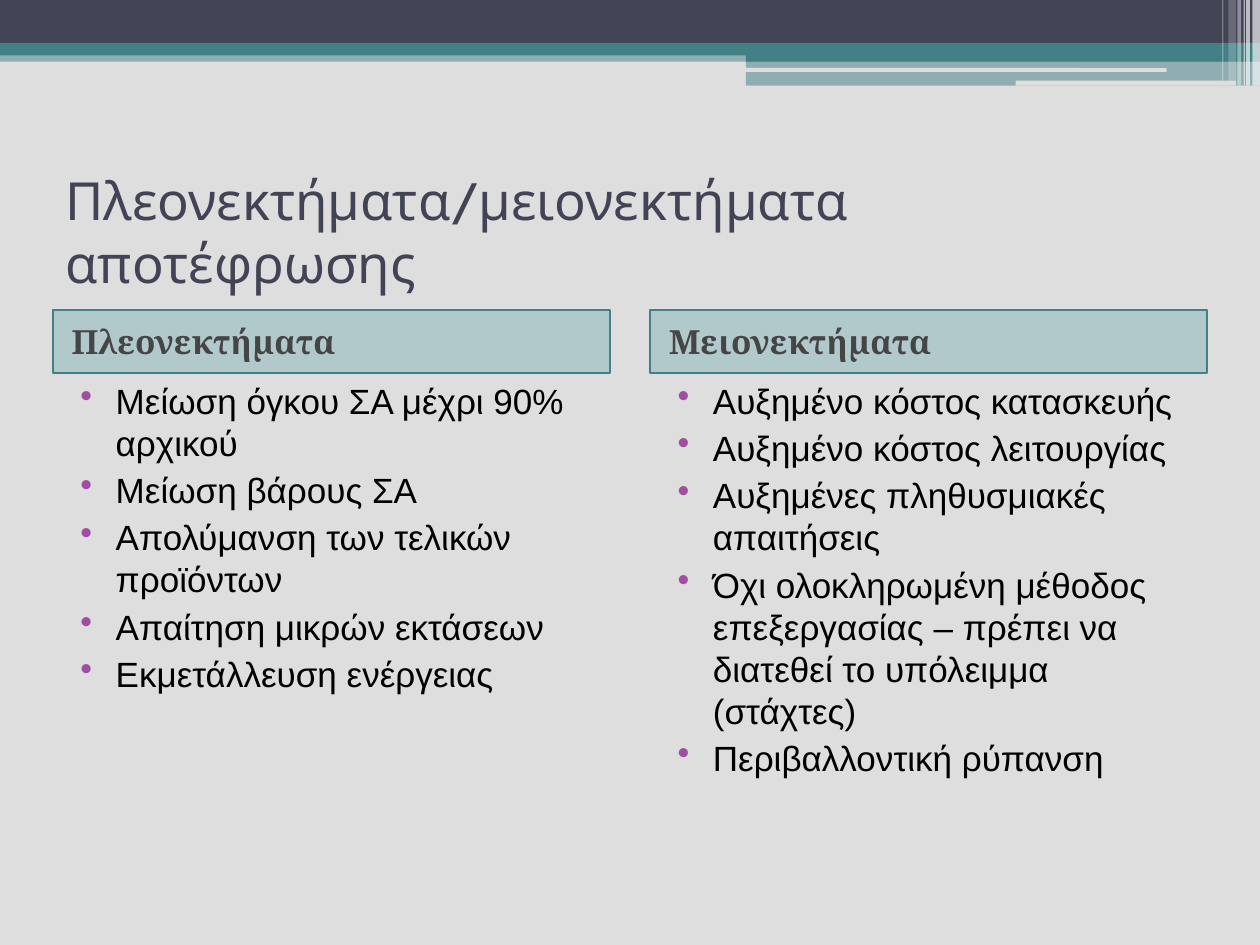
"""Build the slide on the pros and cons of incineration."""
import pptx
import pptx.util
import pptx.dml.color
import pptx.enum.shapes
import pptx.enum.text
import pptx.oxml.ns
from lxml import etree

Inches, Pt = pptx.util.Inches, pptx.util.Pt
RGB = pptx.dml.color.RGBColor
KIND = pptx.enum.shapes.MSO_SHAPE
ANCHOR = pptx.enum.text.MSO_ANCHOR
qn = pptx.oxml.ns.qn

PAPER = RGB(0xDE, 0xDE, 0xDE)
NAVY = RGB(0x42, 0x44, 0x56)
TEAL = RGB(0x43, 0x80, 0x86)
AQUA = RGB(0x32, 0x8E, 0x97)
WHITE = RGB(0xFF, 0xFF, 0xFF)
GREY = RGB(0x45, 0x45, 0x45)
BLACK = RGB(0, 0, 0)
PURPLE = RGB(0xA0, 0x4D, 0xA3)

TITLE = "Πλεονεκτήματα/μειονεκτήματα αποτέφρωσης"
COLUMNS = [
    ("Πλεονεκτήματα", [
        "Μείωση όγκου ΣΑ μέχρι 90% αρχικού",
        "Μείωση βάρους ΣΑ",
        "Απολύμανση των τελικών προϊόντων",
        "Απαίτηση μικρών εκτάσεων",
        "Εκμετάλλευση ενέργειας",
    ]),
    ("Μειονεκτήματα", [
        "Αυξημένο κόστος κατασκευής",
        "Αυξημένο κόστος λειτουργίας",
        "Αυξημένες πληθυσμιακές απαιτήσεις",
        "Όχι ολοκληρωμένη μέθοδος επεξεργασίας – πρέπει να διατεθεί "
        "το υπόλειμμα (στάχτες)",
        "Περιβαλλοντική ρύπανση",
    ]),
]
BANDS = [
    ((0, 0.4, 10, 0.09), TEAL, 50),
    ((0, 0, 10, 0.34), NAVY, 100),
    ((0, 0.34, 10, 0.1), TEAL, 100),
    ((5.92, 0.39, 4.08, 0.1), TEAL, 100),
    ((5.92, 0.48, 4.08, 0.2), TEAL, 50),
]
SLOTS = [(5.91, 0.54, 3.35, 0.03), (8.06, 0.64, 1.75, 0.04)]
STRIPES = [
    (9.94, 0.06, 0.68, 65), (9.89, 0.03, 0.68, 65), (9.87, 0.01, 0.68, 60),
    (9.82, 0.03, 0.68, 40), (9.75, 0.06, 0.64, 20), (9.7, 0.01, 0.64, 30),
]
HEADING = {"size": Pt(30), "name": "Cabin"}
LABEL = {"size": Pt(19), "name": "Cambria", "bold": True}
ITEM = {"size": Pt(20), "name": "Arial"}

LEFT, WIDTH, STEP = 0.42, 4.42, 4.74
TOP, HEAD, BODY = 2.46, 0.5, 4.25


def add_box(slide, at, color, alpha=100, kind=KIND.RECTANGLE):
    """Add a filled shape without outline or shadow."""
    box = slide.shapes.add_shape(kind, *map(Inches, at))
    box.shadow.inherit = False
    box.fill.solid()
    box.fill.fore_color.rgb = color
    box.line.fill.background()
    if alpha < 100:
        tint = box.fill._xPr.find(".//" + qn("a:srgbClr"))
        etree.SubElement(tint, qn("a:alpha"), val=str(alpha * 1000))
    return box


def add_bullet(para):
    """Give a paragraph a coloured bullet."""
    props = para._p.get_or_add_pPr()
    tint = etree.SubElement(props, qn("a:buClr"))
    etree.SubElement(tint, qn("a:srgbClr"), val=str(PURPLE))
    etree.SubElement(props, qn("a:buChar"), char="•")


def write(box, lines, style, color, anchor, indent=(0, 0), bullet=False):
    """Fill a box with styled left-aligned paragraphs."""
    frame = box.text_frame
    frame.word_wrap = True
    frame.vertical_anchor = anchor
    for pos, line in enumerate(lines):
        para = frame.add_paragraph() if pos else frame.paragraphs[0]
        para.alignment = pptx.enum.text.PP_ALIGN.LEFT
        if pos:
            para.space_before = Pt(3)
        props = para._p.get_or_add_pPr()
        for key, size in zip(("marL", "indent"), indent):
            props.set(key, str(Inches(size)))
        if bullet:
            add_bullet(para)
        run = para.add_run()
        run.text = line
        for key, value in style.items():
            setattr(run.font, key, value)
        run.font.color.rgb = color


def add_text(slide, at, *args, **extra):
    """Add a text box and fill it."""
    write(slide.shapes.add_textbox(*map(Inches, at)), *args, **extra)


def main():
    """Lay out and save the slide."""
    deck = pptx.Presentation()
    deck.slide_width, deck.slide_height = Inches(10), Inches(7.5)
    slide = deck.slides.add_slide(deck.slide_layouts[6])
    slide.background.fill.solid()
    slide.background.fill.fore_color.rgb = PAPER

    for at, color, alpha in BANDS:
        add_box(slide, at, color, alpha)
    for at in SLOTS:
        add_box(slide, at, PAPER, kind=KIND.ROUNDED_RECTANGLE)
    for left, width, height, alpha in STRIPES:
        add_box(slide, (left, 0, width, height), WHITE, alpha)

    add_text(slide, (LEFT, 1.25, 9.17, 1.17), [TITLE], HEADING, NAVY,
             ANCHOR.MIDDLE)
    for pos, (label, items) in enumerate(COLUMNS):
        left = LEFT + pos * STEP
        box = add_box(slide, (left, TOP, WIDTH, HEAD), AQUA, 25)
        box.line.color.rgb = TEAL
        box.line.width = Pt(1)
        write(box, [label], LABEL, GREY, ANCHOR.MIDDLE, (0.05, 0))
        add_text(slide, (left, TOP + HEAD, WIDTH, BODY), items, ITEM, BLACK,
                 ANCHOR.TOP, (0.4, -0.28), bullet=True)
    deck.save("out.pptx")


if __name__ == "__main__":
    main()
